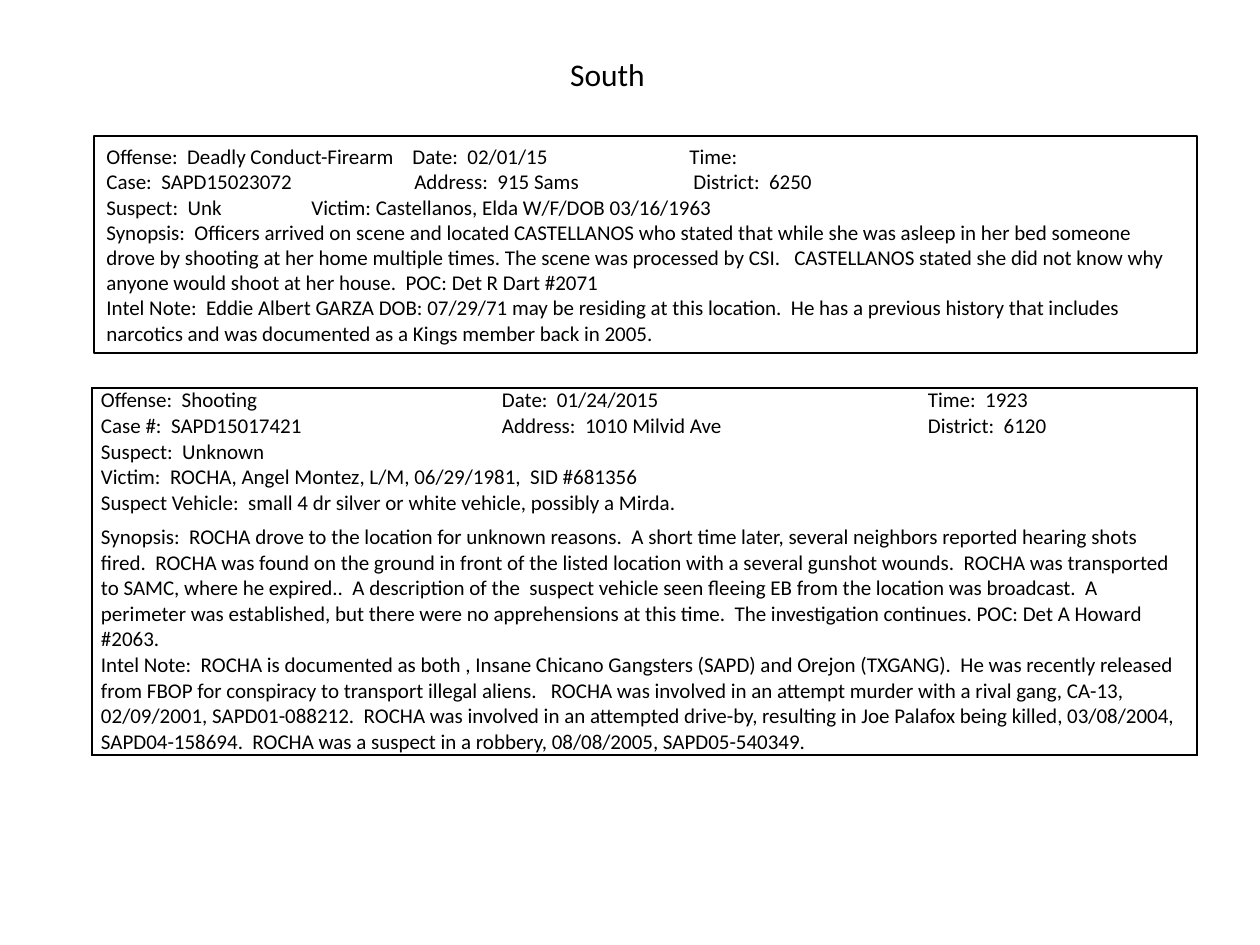
from lxml import etree
from pptx import Presentation
from pptx.dml.color import RGBColor
from pptx.enum.shapes import MSO_SHAPE
from pptx.enum.text import MSO_ANCHOR, MSO_AUTO_SIZE, PP_ALIGN
from pptx.oxml.ns import qn
from pptx.util import Pt

RECT = MSO_SHAPE.RECTANGLE
TOP, MIDDLE = MSO_ANCHOR.TOP, MSO_ANCHOR.MIDDLE
NO_FIT = MSO_AUTO_SIZE.NONE
LEFT, CENTER = PP_ALIGN.LEFT, PP_ALIGN.CENTER
PX = 914400 / 126
BLACK, WHITE = "000000", "FFFFFF"


def px(n):
    """Turn pixels into EMU."""
    return round(n * PX)


def style(para, size, align=LEFT):
    para.alignment = align
    para.font.name = "Calibri"
    para.font.size = Pt(size)
    para.font.color.rgb = RGBColor.from_string(BLACK)


deck = Presentation()
deck.slide_width, deck.slide_height = px(1260), px(945)
slide = deck.slides.add_slide(deck.slide_layouts[5])

# Title
title = slide.shapes.title
title.left, title.top, title.width, title.height = px(557), px(49), px(101), px(50)
frame = title.text_frame
frame.text = "South"
frame.word_wrap = False
frame.auto_size = NO_FIT
frame.vertical_anchor = TOP
style(frame.paragraphs[0], 18, CENTER)

# Shooting report: one text spans the row, three fill the columns
rows = [
    (25, ["Offense:  Shooting", "Date:  01/24/2015", "Time:  1923"]),
    (25, ["Case #:  SAPD15017421", "Address:  1010 Milvid Ave", "District:  6120"]),
    (25, ["Suspect:  Unknown"]),
    (25, ["Victim:  ROCHA, Angel Montez, L/M, 06/29/1981,  SID #681356"]),
    (34, ["Suspect Vehicle:  small 4 dr silver or white vehicle, possibly a Mirda."]),
    (128, ["Synopsis:  ROCHA drove to the location for unknown reasons.  A short time later, "
           "several neighbors reported hearing shots fired.  ROCHA was found on the ground in "
           "front of the listed location with a several gunshot wounds.  ROCHA was transported "
           "to SAMC, where he expired..  A description of the  suspect vehicle seen fleeing EB "
           "from the location was broadcast.  A perimeter was established, but there were no "
           "apprehensions at this time.  The investigation continues. POC: Det A Howard #2063."]),
    (100, ["Intel Note:  ROCHA is documented as both , Insane Chicano Gangsters (SAPD) and "
           "Orejon (TXGANG).  He was recently released from FBOP for conspiracy to transport "
           "illegal aliens.   ROCHA was involved in an attempt murder with a rival gang, CA-13, "
           "02/09/2001, SAPD01-088212.  ROCHA was involved in an attempted drive-by, resulting "
           "in Joe Palafox being killed, 03/08/2004, SAPD04-158694.  ROCHA was a suspect in a "
           "robbery, 08/08/2005, SAPD05-540349."]),
]
widths = [401, 426, 278]
last = len(rows) - 1
table = slide.shapes.add_table(len(rows), len(widths), px(92), px(388),
                               px(sum(widths)), px(362)).table
table.first_row = table.horz_banding = False
for col, width in zip(table.columns, widths):
    col.width = px(width)

for r, (height, texts) in enumerate(rows):
    table.rows[r].height = px(height)
    span = len(texts) == 1
    if span:
        table.cell(r, 0).merge(table.cell(r, 2))
    for c in range(len(widths)):
        cell = table.cell(r, c)
        edges = {"lnL": c == 0, "lnR": c == 2 or span, "lnT": r == 0, "lnB": r == last}
        props = cell._tc.get_or_add_tcPr()
        for tag, drawn in edges.items():
            line = etree.SubElement(props, qn("a:" + tag), w=str(Pt(1)))
            if drawn:
                fill = etree.SubElement(line, qn("a:solidFill"))
                etree.SubElement(fill, qn("a:srgbClr"), val=BLACK)
            else:
                etree.SubElement(line, qn("a:noFill"))
        cell.fill.solid()
        cell.fill.fore_color.rgb = RGBColor.from_string(WHITE)
        cell.margin_left = cell.margin_right = px(9)
        cell.margin_top = cell.margin_bottom = 0
        if c < len(texts):
            cell.text = texts[c]
            style(cell.text_frame.paragraphs[0], 12)

# Firearm report: each line with its tab stops
lines = [
    ("Offense:  Deadly Conduct-Firearm\tDate:  02/01/15\tTime:", [306, 583]),
    ("Case:  SAPD15023072\tAddress:  915 Sams\tDistrict:  6250", [308, 587]),
    ("Suspect:  Unk\tVictim: Castellanos, Elda W/F/DOB 03/16/1963", [205]),
    ("Synopsis:  Officers arrived on scene and located CASTELLANOS who stated that while she "
     "was asleep in her bed someone drove by shooting at her home multiple times. The scene "
     "was processed by CSI.   CASTELLANOS stated she did not know why anyone would shoot at "
     "her house.  POC: Det R Dart #2071", []),
    ("Intel Note:  Eddie Albert GARZA DOB: 07/29/71 may be residing at this location.  He has "
     "a previous history that includes narcotics and was documented as a Kings member back in "
     "2005.", []),
]
box = slide.shapes.add_shape(RECT, px(94), px(136), px(1103), px(217))
box.shadow.inherit = False
box.fill.background()
box.line.color.rgb = RGBColor.from_string(BLACK)
box.line.width = Pt(1)
frame = box.text_frame
frame.word_wrap = True
frame.vertical_anchor = MIDDLE
frame.text = "\n".join(text for text, stops in lines)
for para, (text, stops) in zip(frame.paragraphs, lines):
    if stops:
        tabs = etree.SubElement(para._p.get_or_add_pPr(), qn("a:tabLst"))
        for stop in stops:
            etree.SubElement(tabs, qn("a:tab"), pos=str(px(stop)), algn="l")
    style(para, 12)

deck.save("out.pptx")
